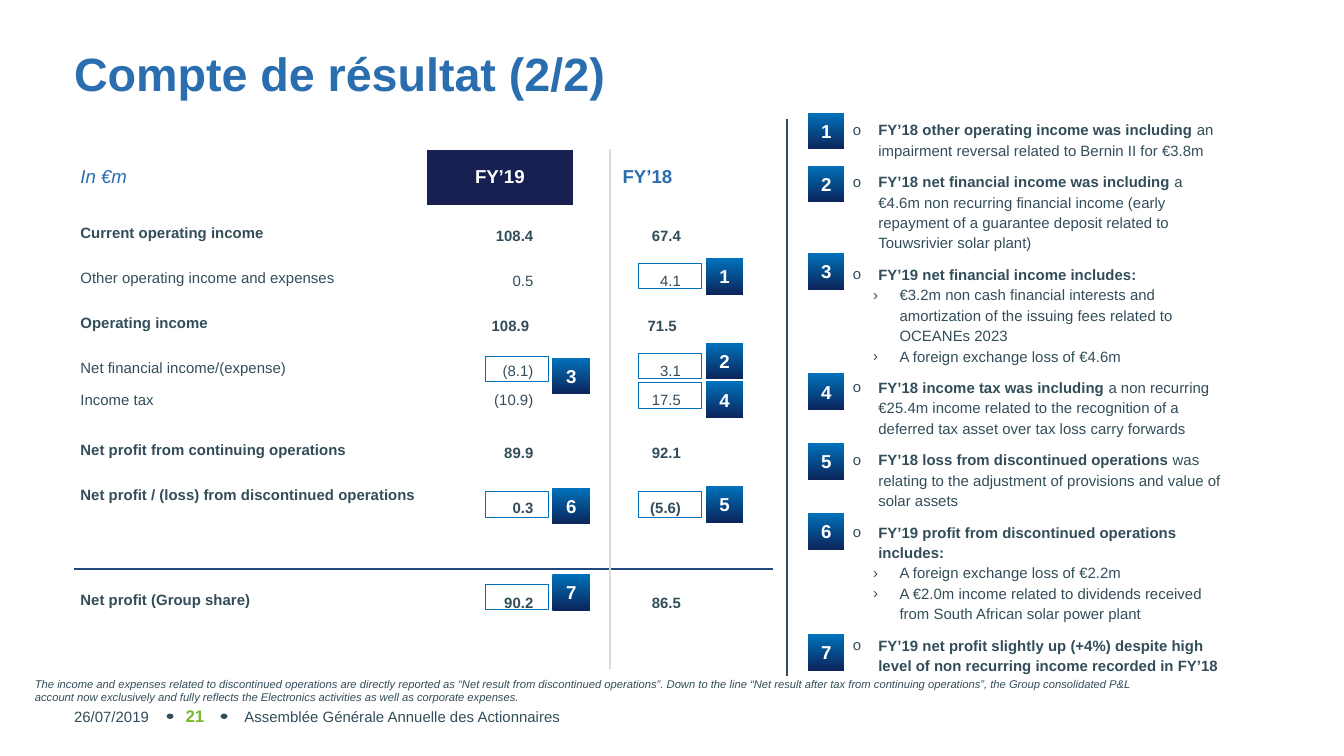
"""Build the income statement page with its numbered comments."""
from lxml import etree
from pptx import Presentation
from pptx import util as u
from pptx.dml import color as colour
from pptx.enum import shapes, text
from pptx.oxml import ns

COLORS = {
    "ink": "324D59", "blue": "2A6EAF", "navy": "172051", "green": "76B82A",
    "sky": "0072BB", "deep": "0C255B", "rule": "1F497D", "grey": "D9D9D9",
    "white": "FFFFFF",
}
LEFT, CENTER, RIGHT = text.PP_ALIGN.LEFT, text.PP_ALIGN.CENTER, text.PP_ALIGN.RIGHT
TOP, MIDDLE = text.MSO_ANCHOR.TOP, text.MSO_ANCHOR.MIDDLE

ITEM, SPACER = 0.42, 0.43
ROW_HEIGHTS = [1.07, 0.36, *[ITEM, SPACER] * 3, ITEM, 0.71, SPACER, ITEM, SPACER,
               0.79, SPACER, 0.33, SPACER, ITEM, 0.33, ITEM]
COLUMN_WIDTHS = [6.63, 2.79, 2.79, 0.97]
RULED_ROW = 15
INCOME_ROWS = {
    2: ("Current operating income", "108.4", "67.4", True),
    4: ("Other operating income and expenses", "0.5", "4.1", False),
    6: ("Operating income", "108.9 ", "71.5 ", True),
    8: ("Net financial income/(expense)", "(8.1)", "3.1", False),
    9: ("Income tax", "(10.9)", "17.5", False),
    11: ("Net profit from continuing operations", "89.9", "92.1", True),
    13: ("Net profit / (loss) from discontinued operations", "0.3", "(5.6)", True),
    17: ("Net profit (Group share)", "90.2", "86.5", True),
}
CENTERED_LABELS = (9,)

FY19, FY18 = 9.17, 12.07
MARKS = [
    (1, FY18, 4.98, 4.88), (2, FY18, 6.68, 6.48), (3, FY19, 6.73, 6.76),
    (4, FY18, 7.24, 7.21), (5, FY18, 9.3, 9.19), (6, FY19, 9.3, 9.22),
    (7, FY19, 11.05, 10.85),
]
COMMENT_TOPS = [2.13, 3.13, 4.78, 7.06, 8.38, 9.7, 11.99]
COMMENTS = [
    ("FY’18 other operating income was including",
     " an impairment reversal related to Bernin II for €3.8m", []),
    ("FY’18 net financial income was including ",
     "a €4.6m non recurring financial income (early repayment of a guarantee "
     "deposit related to Touwsrivier solar plant)", []),
    ("FY’19 net financial income includes:", "",
     ["€3.2m non cash financial interests and amortization of the issuing fees "
      "related to OCEANEs 2023",
      "A foreign exchange loss of €4.6m"]),
    ("FY’18 income tax was including ",
     "a non recurring €25.4m income related to the recognition of a deferred "
     "tax asset over tax loss carry forwards", []),
    ("FY’18 loss from discontinued operations ",
     "was relating to the adjustment of provisions and value of solar assets", []),
    ("FY’19 profit from discontinued operations includes:", "",
     ["A foreign exchange loss of €2.2m",
      "A €2.0m income related to dividends received from South African solar "
      "power plant"]),
    ("FY’19 net profit slightly up (+4%) despite high level of non recurring "
     "income recorded in FY’18", "", []),
]
FOOTNOTE = (
    "The income and expenses related to discontinued operations are directly "
    "reported as “Net result from discontinued operations”. Down to the line "
    "“Net result after tax from continuing operations”, the Group consolidated "
    "P&L account now exclusively and fully reflects the Electronics activities "
    "as well as corporate expenses.")


def rgb(name):
    """Return the named colour."""
    return colour.RGBColor.from_string(COLORS[name])


def add_span(para, words, size=8, color="ink", bold=False, italic=False, align=None):
    """Add formatted words to a paragraph."""
    span = para.add_run()
    span.text = words
    font = span.font
    font.name, font.size, font.bold, font.italic = "Arial", u.Pt(size), bold, italic
    font.color.rgb = rgb(color)
    if align is not None:
        para.alignment = align


def set_frame(frame, anchor, left=0, right=0, top=0, bottom=0):
    """Set wrapping, anchor and insets in centimetres."""
    frame.word_wrap = True
    frame.vertical_anchor = anchor
    frame.margin_left, frame.margin_right = u.Cm(left), u.Cm(right)
    frame.margin_top, frame.margin_bottom = u.Cm(top), u.Cm(bottom)


def place(box, left, top, width, height):
    """Move and size a box in centimetres."""
    box.left, box.top, box.width, box.height = map(u.Cm, (left, top, width, height))


def add_label(page, bounds, words, anchor=MIDDLE, insets=(0, 0, 0, 0), **style):
    """Add a text box with one paragraph."""
    box = page.shapes.add_textbox(*map(u.Cm, bounds))
    set_frame(box.text_frame, anchor, *insets)
    add_span(box.text_frame.paragraphs[0], words, **style)


def add_form(page, kind, bounds, fill=None, line=None):
    """Add a preset shape with an optional plain fill and thin outline."""
    form = page.shapes.add_shape(kind, *map(u.Cm, bounds))
    form.shadow.inherit = False
    if fill:
        form.fill.solid()
        form.fill.fore_color.rgb = rgb(fill)
    else:
        form.fill.background()
    if line:
        form.line.color.rgb = rgb(line)
        form.line.width = u.Pt(0.5)
    else:
        form.line.fill.background()
    return form


def add_badge(page, number, left, top, width):
    """Add a numbered square with a vertical gradient."""
    badge = add_form(page, shapes.MSO_SHAPE.RECTANGLE, (left, top, width, 0.69))
    badge.fill.gradient()
    badge.fill.gradient_angle = 270
    for stop, name in zip(badge.fill.gradient_stops, ("sky", "deep")):
        stop.color.rgb = rgb(name)
    set_frame(badge.text_frame, MIDDLE)
    add_span(badge.text_frame.paragraphs[0], str(number), size=10, color="white",
             bold=True, align=CENTER)


def add_rule(page, left, top, bottom, color, width):
    """Add a vertical line."""
    rule = page.shapes.add_connector(shapes.MSO_CONNECTOR.STRAIGHT,
                                     *map(u.Cm, (left, top, left, bottom)))
    rule.line.color.rgb = rgb(color)
    rule.line.width = u.Pt(width)
    etree.SubElement(rule._element.spPr, ns.qn("a:effectLst"))


def add_bullet(para, sign, left, hang):
    """Give a paragraph a bullet, a hanging indent and its line spacing."""
    para.line_spacing = 1.14
    props = para._p.get_or_add_pPr()
    props.set("marL", str(u.Cm(left)))
    props.set("indent", str(-u.Cm(hang)))
    tint = etree.SubElement(props, ns.qn("a:buClr"))
    etree.SubElement(tint, ns.qn("a:srgbClr"), val=COLORS["ink"])
    etree.SubElement(props, ns.qn("a:buFont"), typeface="Arial")
    etree.SubElement(props, ns.qn("a:buChar"), char=sign)


def fill_comments(box):
    """Write the comments and their details into the body placeholder."""
    place(box, 15.77, 2.11, 7.65, 10.87)
    frame = box.text_frame
    set_frame(frame, TOP, 0.25, 0.25, 0.13, 0.13)
    frame.auto_size = text.MSO_AUTO_SIZE.NONE
    for index, (lead, rest, details) in enumerate(COMMENTS):
        para = frame.add_paragraph() if index else frame.paragraphs[0]
        para.space_before = u.Pt(6 if index else 0)
        add_bullet(para, "o", 0.58, 0.48)
        add_span(para, lead, bold=True)
        if rest:
            add_span(para, rest)
        for detail in details:
            para = frame.add_paragraph()
            para.level = 1
            para.space_before = u.Pt(0)
            add_bullet(para, "›", 0.98, 0.5)
            add_span(para, detail)


def format_cell(cell, row, fill="white"):
    """Set the borders, fill and margins of a cell."""
    props = cell._tc.get_or_add_tcPr()
    ruled = {"lnT": row == RULED_ROW + 1, "lnB": row == RULED_ROW}
    for edge in ("lnL", "lnR", "lnT", "lnB"):
        line = etree.SubElement(props, ns.qn(f"a:{edge}"), w=str(u.Pt(1)))
        solid = etree.SubElement(line, ns.qn("a:solidFill"))
        name = "rule" if ruled.get(edge) else "white"
        etree.SubElement(solid, ns.qn("a:srgbClr"), val=COLORS[name])
    cell.fill.solid()
    cell.fill.fore_color.rgb = rgb(fill)
    cell.margin_top = cell.margin_bottom = 0
    cell.vertical_anchor = MIDDLE


def write_cell(cell, words, left, right, **style):
    """Write one paragraph in a cell with side margins in centimetres."""
    cell.margin_left, cell.margin_right = u.Cm(left), u.Cm(right)
    add_span(cell.text_frame.paragraphs[0], words, **style)


def add_income_table(page):
    """Add the table of results for both years."""
    table = page.shapes.add_table(
        len(ROW_HEIGHTS), len(COLUMN_WIDTHS), u.Cm(1.42), u.Cm(2.82),
        u.Cm(sum(COLUMN_WIDTHS)), u.Cm(sum(ROW_HEIGHTS))).table
    table.first_row = table.horz_banding = False
    for column, width in zip(table.columns, COLUMN_WIDTHS):
        column.width = u.Cm(width)
    for row, height in enumerate(ROW_HEIGHTS):
        table.rows[row].height = u.Cm(height)
        for column, cell in enumerate(table.rows[row].cells):
            format_cell(cell, row, "navy" if (row, column) == (0, 1) else "white")
            if column == 3 or (row and row not in INCOME_ROWS):
                end = cell.text_frame.paragraphs[0]._p.get_or_add_endParaRPr()
                end.set("sz", "600")
    write_cell(table.cell(0, 0), "In €m", 0.1, 0.1, size=10, color="blue", italic=True)
    for column, words, color in ((1, "FY’19", "white"), (2, "FY’18", "blue")):
        write_cell(table.cell(0, column), words, 0.15, 0.15, size=10, color=color,
                   bold=True, align=CENTER)
    for row, (label, *values, bold) in INCOME_ROWS.items():
        write_cell(table.cell(row, 0), label, 0.1, 0.1, bold=bold, align=LEFT)
        table.cell(row, 0).vertical_anchor = MIDDLE if row in CENTERED_LABELS else TOP
        for column, value in enumerate(values, 1):
            write_cell(table.cell(row, column), value, 0.15, 0.76, bold=bold, align=RIGHT)


def add_footer(page):
    """Add the date, page number and meeting name with their dots."""
    for left in (3.15, 4.17):
        add_form(page, shapes.MSO_SHAPE.OVAL, (left, 13.49, 0.13, 0.1), fill="ink")
    add_label(page, (1.4, 13.16, 1.85, 0.76), "26/07/2019")
    add_label(page, (4.29, 13.16, 17.07, 0.76),
              "Assemblée Générale Annuelle des Actionnaires", insets=(0.33, 0, 0, 0))
    add_label(page, (3.23, 13.16, 0.91, 0.76), "21", size=9, color="green",
              bold=True, align=CENTER)


def main():
    """Build and save the deck."""
    deck = Presentation()
    deck.slide_width, deck.slide_height = u.Cm(25.4), u.Cm(14.29)
    page = deck.slides.add_slide(deck.slide_layouts[1])
    title = page.shapes.title
    place(title, 1.4, 0.84, 24, 1.07)
    set_frame(title.text_frame, MIDDLE)
    title.text_frame.auto_size = text.MSO_AUTO_SIZE.NONE
    add_span(title.text_frame.paragraphs[0], "Compte de résultat (2/2)", size=25,
             color="blue", bold=True, align=LEFT)
    fill_comments(page.placeholders[1])
    add_footer(page)
    add_rule(page, 14.88, 2.24, 12.78, "ink", 1)
    for number, top in enumerate(COMMENT_TOPS, 1):
        add_badge(page, number, 15.27, top, 0.69)
    add_income_table(page)
    for number, left, frame_top, badge_top in MARKS:
        add_form(page, shapes.MSO_SHAPE.RECTANGLE, (left, frame_top, 1.19, 0.48),
                 line="sky")
        add_badge(page, number, left + 1.27, badge_top, 0.71)
    add_rule(page, 11.53, 2.82, 12.65, "grey", 0.75)
    add_label(page, (0.41, 12.67, 21.51, 1.02), FOOTNOTE, anchor=TOP,
              insets=(0.25, 0.25, 0.13, 0.13), size=6, italic=True)
    deck.save("out.pptx")


if __name__ == "__main__":
    main()
